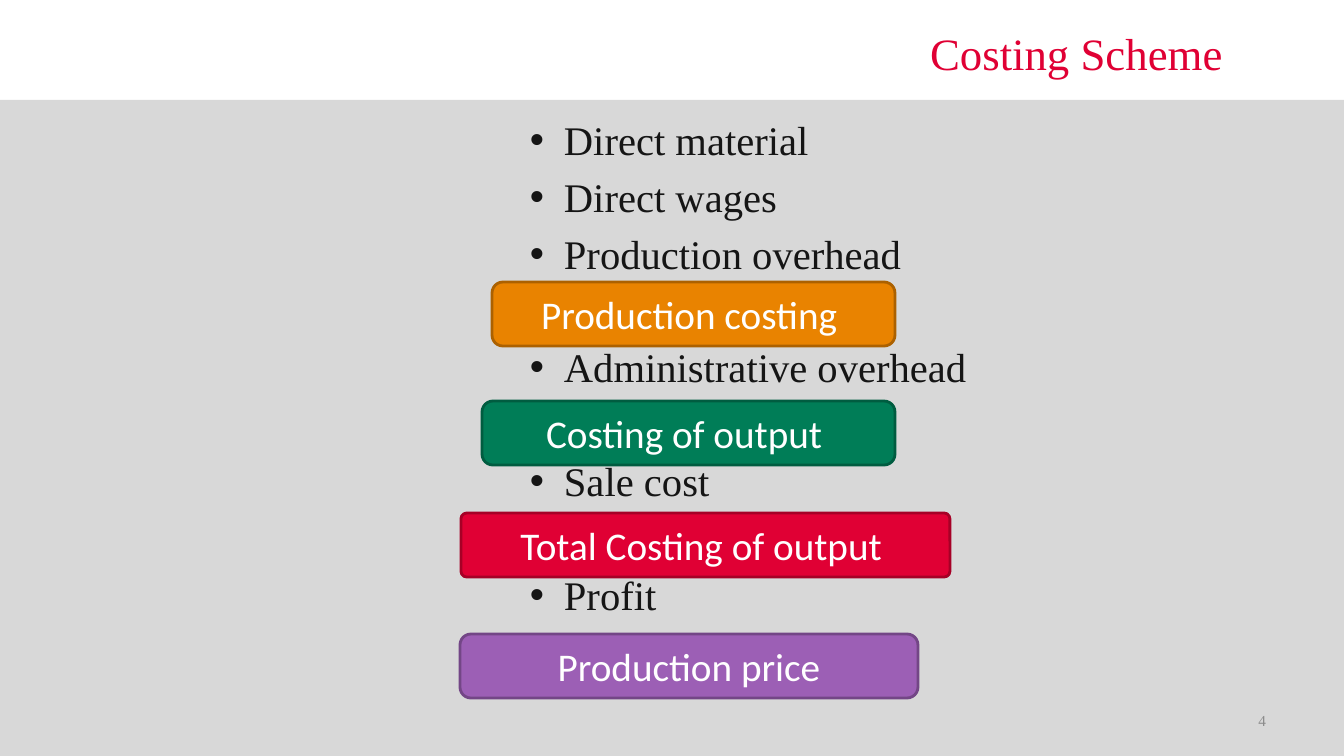
from dataclasses import dataclass

from lxml.etree import SubElement
from pptx import Presentation
from pptx.dml.color import RGBColor
from pptx.enum.shapes import MSO_SHAPE as Shape
from pptx.enum.text import MSO_ANCHOR as Anchor, PP_ALIGN as Align
from pptx.oxml.ns import qn
from pptx.util import Emu, Pt

EMU_PER_PX = 914400 / 100.8


@dataclass(frozen=True)
class Theme:
    serif: str = "Times New Roman"
    sans: str = "Calibri"
    panel: str = "D8D8D8"
    title: str = "E00034"
    body: str = "151515"
    muted: str = "8C8C8C"
    light: str = "FFFFFF"
    title_size: float = 32
    body_size: float = 29
    total_size: float = 28
    number_size: float = 10.9
    border: float = 2
    item_gap: float = 5.8
    total_gap: float = 46.4


THEME = Theme()

COST_ITEMS = [
    ("Direct material", 0),
    ("Direct wages", THEME.item_gap),
    ("Production overhead", THEME.item_gap),
    ("Administrative overhead", THEME.total_gap),
    ("Sale cost", THEME.total_gap),
    ("Profit", THEME.total_gap),
]

TOTAL_HEIGHT = 64
TOTALS = [
    ("Production costing ", 492, 282, 403, 0.17, "E98300", "AC6100"),
    ("Costing of output ", 482, 401, 413, 0.17, "007D57", "005C40"),
    ("Total Costing of output ", 461, 513, 489, 0.09, "E00034", "A60026"),
    ("Production price", 460, 634, 458, 0.17, "9C5FB5", "734686"),
]


def px(length):
    return Emu(round(length * EMU_PER_PX))


def rgb(code):
    return RGBColor.from_string(code)


def style(para, face, size, color, align=Align.LEFT):
    para.alignment = align
    para.font.name = face
    para.font.size = Pt(size)
    para.font.color.rgb = rgb(color)


def add_text_box(page, left, top, width, height, anchor):
    box = page.shapes.add_textbox(px(left), px(top), px(width), px(height))
    frame = box.text_frame
    frame.word_wrap = True
    frame.vertical_anchor = anchor
    return frame


def add_right_label(page, text, area, size, color):
    para = add_text_box(page, *area, Anchor.MIDDLE).paragraphs[0]
    para.text = text
    style(para, THEME.serif, size, color, Align.RIGHT)


def add_block(page, kind, left, top, width, height, fill):
    block = page.shapes.add_shape(kind, px(left), px(top), px(width), px(height))
    block.shadow.inherit = False
    block.fill.solid()
    block.fill.fore_color.rgb = rgb(fill)
    return block


def add_panel(page):
    panel = add_block(page, Shape.RECTANGLE, 0, 100, 1344, 656, THEME.panel)
    panel.line.fill.background()


def add_bullet(para, indent):
    properties = para._p.get_or_add_pPr()
    properties.set("marL", str(px(indent)))
    properties.set("indent", str(px(-indent)))
    SubElement(properties, qn("a:buFont"), typeface="Arial")
    SubElement(properties, qn("a:buChar"), char="•")


def add_cost_list(page):
    frame = add_text_box(page, 520, 110, 510, 646, Anchor.TOP)
    for index, (text, gap) in enumerate(COST_ITEMS):
        para = frame.add_paragraph() if index else frame.paragraphs[0]
        para.text = text
        add_bullet(para, 34)
        para.space_before = Pt(gap)
        style(para, THEME.serif, THEME.body_size, THEME.body)


def add_total(page, text, left, top, width, corner, fill, border):
    block = add_block(page, Shape.ROUNDED_RECTANGLE, left, top, width, TOTAL_HEIGHT, fill)
    block.adjustments[0] = corner
    block.line.color.rgb = rgb(border)
    block.line.width = Pt(THEME.border)
    block.text_frame.vertical_anchor = Anchor.MIDDLE
    para = block.text_frame.paragraphs[0]
    para.text = text
    style(para, THEME.sans, THEME.total_size, THEME.light, Align.CENTER)


def main():
    deck = Presentation()
    deck.slide_width, deck.slide_height = px(1344), px(756)
    page = deck.slides.add_slide(deck.slide_layouts[6])
    add_panel(page)
    add_cost_list(page)
    add_right_label(page, "4", (963, 700, 313, 40), THEME.number_size, THEME.muted)
    for total in TOTALS:
        add_total(page, *total)
    add_right_label(page, "Costing Scheme ", (410, 16, 834, 73), THEME.title_size, THEME.title)
    deck.save("out.pptx")


if __name__ == "__main__":
    main()
